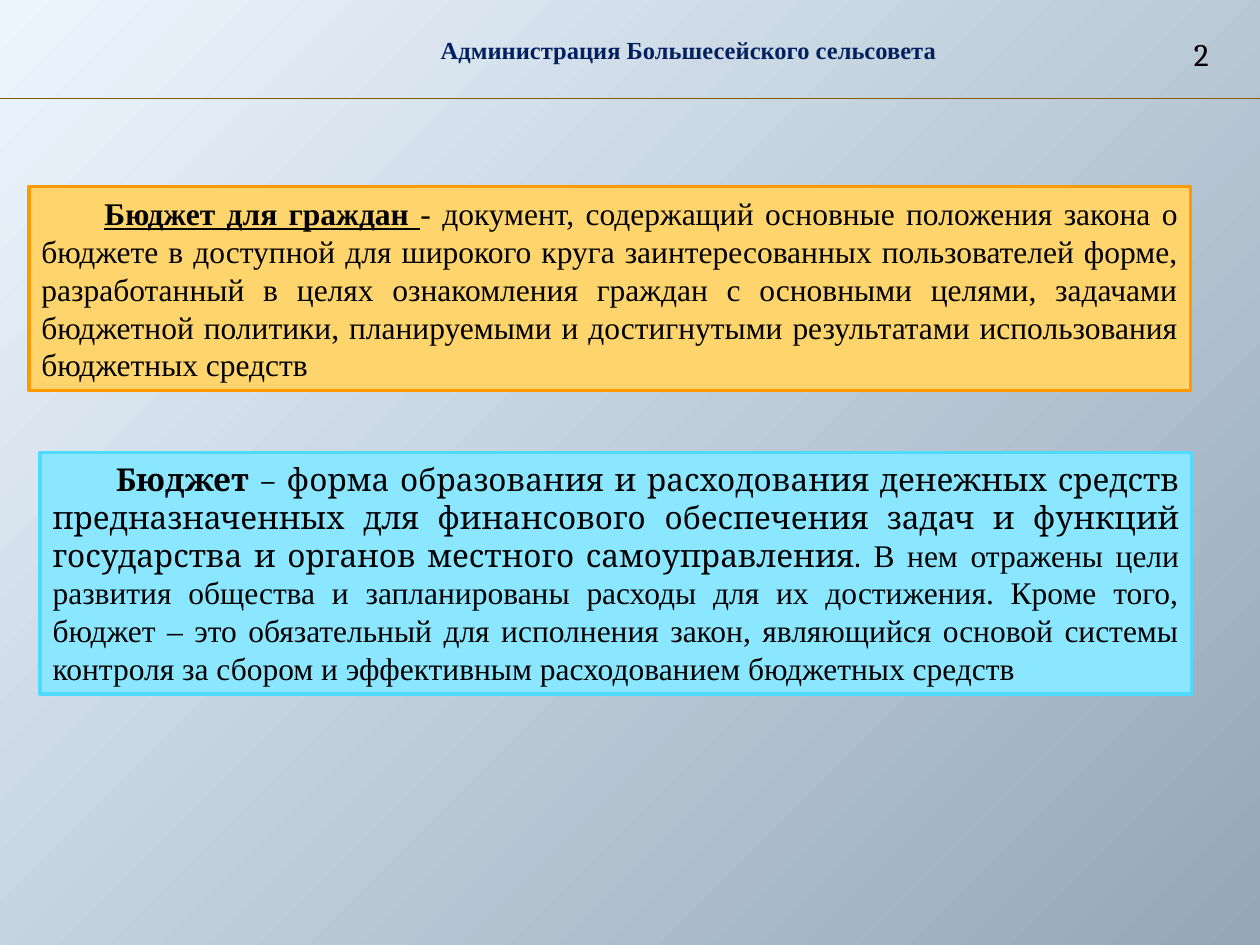
from lxml.etree import SubElement as Sub
from pptx import Presentation
from pptx.dml.color import RGBColor as RGB
from pptx.enum.shapes import MSO_CONNECTOR as Conn, MSO_SHAPE as Shape
from pptx.enum.text import MSO_AUTO_SIZE as Auto, PP_ALIGN as Align
from pptx.oxml.ns import qn
from pptx.util import Pt

HUES = {
    "light": "ECF6FF", "dark": "94A7B7", "rule": "835E01",
    "navy": "002060", "black": "000000",
    "sand": "FED46C", "orange": "FF9900",
    "sky": "8BE6FF", "cyan": "51DAFF",
}
TIMES, CAMBRIA = "Times New Roman", "Cambria"


def hue(name):
    return RGB.from_string(HUES[name])


def paint_back(slide):
    """Gradient that spreads from the top left corner."""
    fill = slide.background.fill
    fill.gradient()
    for stop, name in zip(fill.gradient_stops, ("light", "dark")):
        stop.color.rgb = hue(name)
    grad = slide.element.find(".//" + qn("a:gradFill"))
    grad.remove(grad.find(qn("a:lin")))
    path = Sub(grad, qn("a:path"), path="circle")
    Sub(path, qn("a:fillToRect"), l="0", t="0", r="100000", b="100000")


def add_rule(slide, y):
    line = slide.shapes.add_connector(Conn.STRAIGHT, 0, Pt(y), Pt(720), Pt(y))
    line.line.color.rgb = hue("rule")
    line.line.width = Pt(0.75)
    Sub(line.element.spPr, qn("a:effectLst"))


def write(shape, runs, align, size=18, color="black", indent=0):
    """Fill a shape with one paragraph; a run is (text, font, bold, underline)."""
    frame = shape.text_frame
    frame.word_wrap = True
    frame.auto_size = Auto.SHAPE_TO_FIT_TEXT
    para = frame.paragraphs[0]
    para.alignment = align
    if indent:
        para._p.get_or_add_pPr().set("indent", str(Pt(indent)))
    for text, face, bold, under in runs:
        run = para.add_run()
        run.text = text
        font = run.font
        font.name, font.size = face, Pt(size)
        font.bold, font.underline = bold, under
        font.color.rgb = hue(color)


def add_label(slide, box, text, face, **look):
    bold = look.pop("bold", False)
    shape = slide.shapes.add_textbox(*map(Pt, box))
    write(shape, [(text, face, bold, False)], Align.CENTER, **look)


def add_panel(slide, box, fill, edge, runs):
    shape = slide.shapes.add_shape(Shape.RECTANGLE, *map(Pt, box))
    shape.shadow.inherit = False
    shape.fill.solid()
    shape.fill.fore_color.rgb = hue(fill)
    shape.line.color.rgb = hue(edge)
    shape.line.width = Pt(2)
    write(shape, runs, Align.JUSTIFY, indent=36)


def main():
    deck = Presentation()
    deck.slide_width, deck.slide_height = Pt(720), Pt(540)
    slide = deck.slides.add_slide(deck.slide_layouts[6])
    paint_back(slide)

    # Header
    add_label(slide, (78.5, 16.5, 630, 24.5),
              "Администрация Большесейского сельсовета", TIMES,
              size=14, color="navy", bold=True)
    add_rule(slide, 56.2)

    # Definitions
    add_panel(slide, (16.6, 106.6, 663.8, 116.6), "sand", "orange", [
        ("Бюджет для граждан ", TIMES, True, True),
        ("- документ, содержащий основные положения закона о бюджете в "
         "доступной для широкого круга заинтересованных пользователей форме, "
         "разработанный в целях ознакомления граждан с основными целями, "
         "задачами бюджетной политики, планируемыми и достигнутыми "
         "результатами использования бюджетных средств", TIMES, False, False),
    ])
    add_panel(slide, (23, 258.5, 658, 138.2), "sky", "cyan", [
        ("Бюджет", CAMBRIA, True, False),
        (" – форма образования и расходования денежных средств "
         "предназначенных для финансового обеспечения задач и функций "
         "государства и органов местного самоуправления.",
         CAMBRIA, False, False),
        (" В нем отражены цели развития общества и запланированы расходы для "
         "их достижения. Кроме того, бюджет – это обязательный для исполнения "
         "закон, являющийся основой системы контроля за сбором и эффективным "
         "расходованием бюджетных средств", TIMES, False, False),
    ])

    # Page number
    add_label(slide, (669.6, 16.5, 33.8, 29), "2", CAMBRIA)
    deck.save("out.pptx")


if __name__ == "__main__":
    main()
